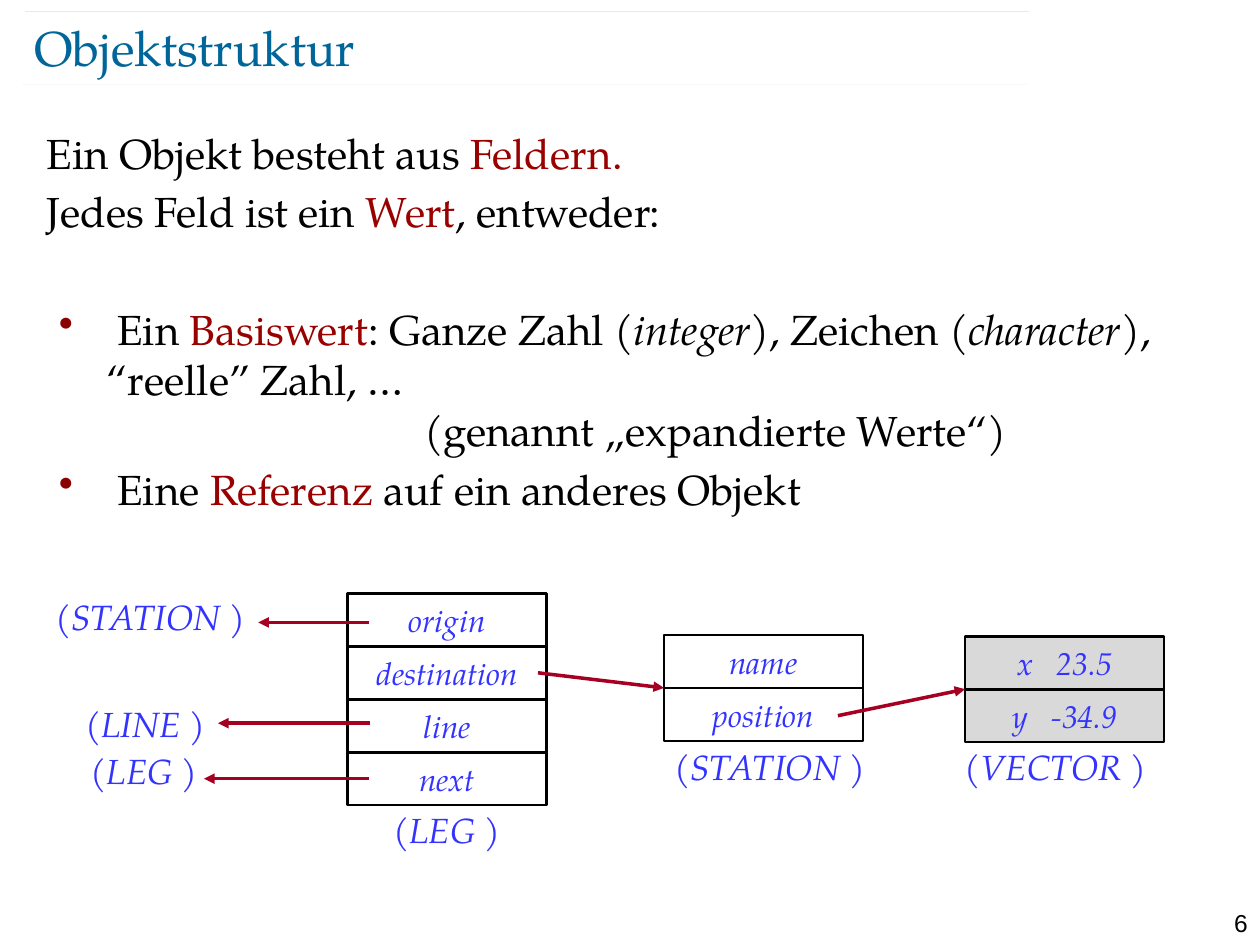
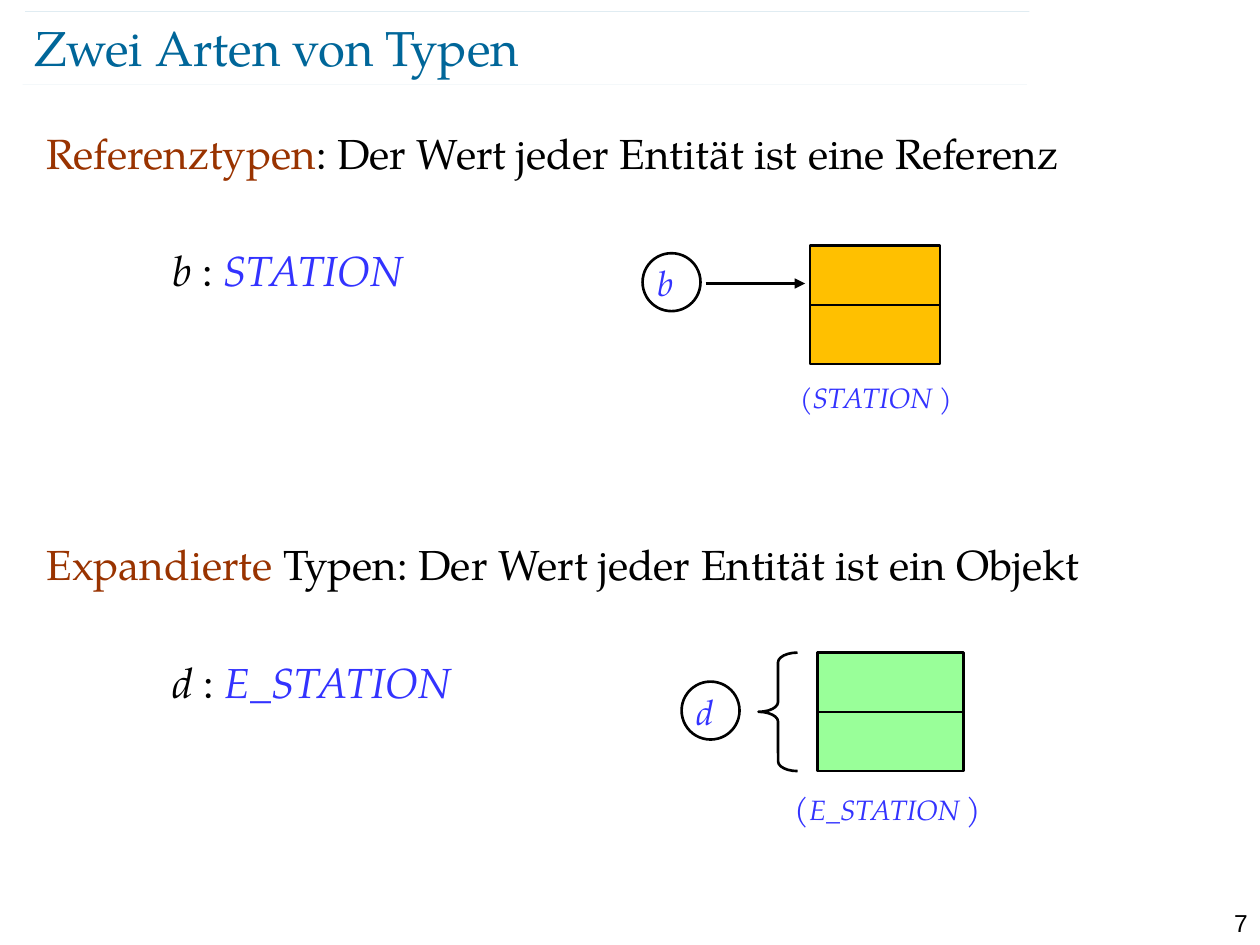
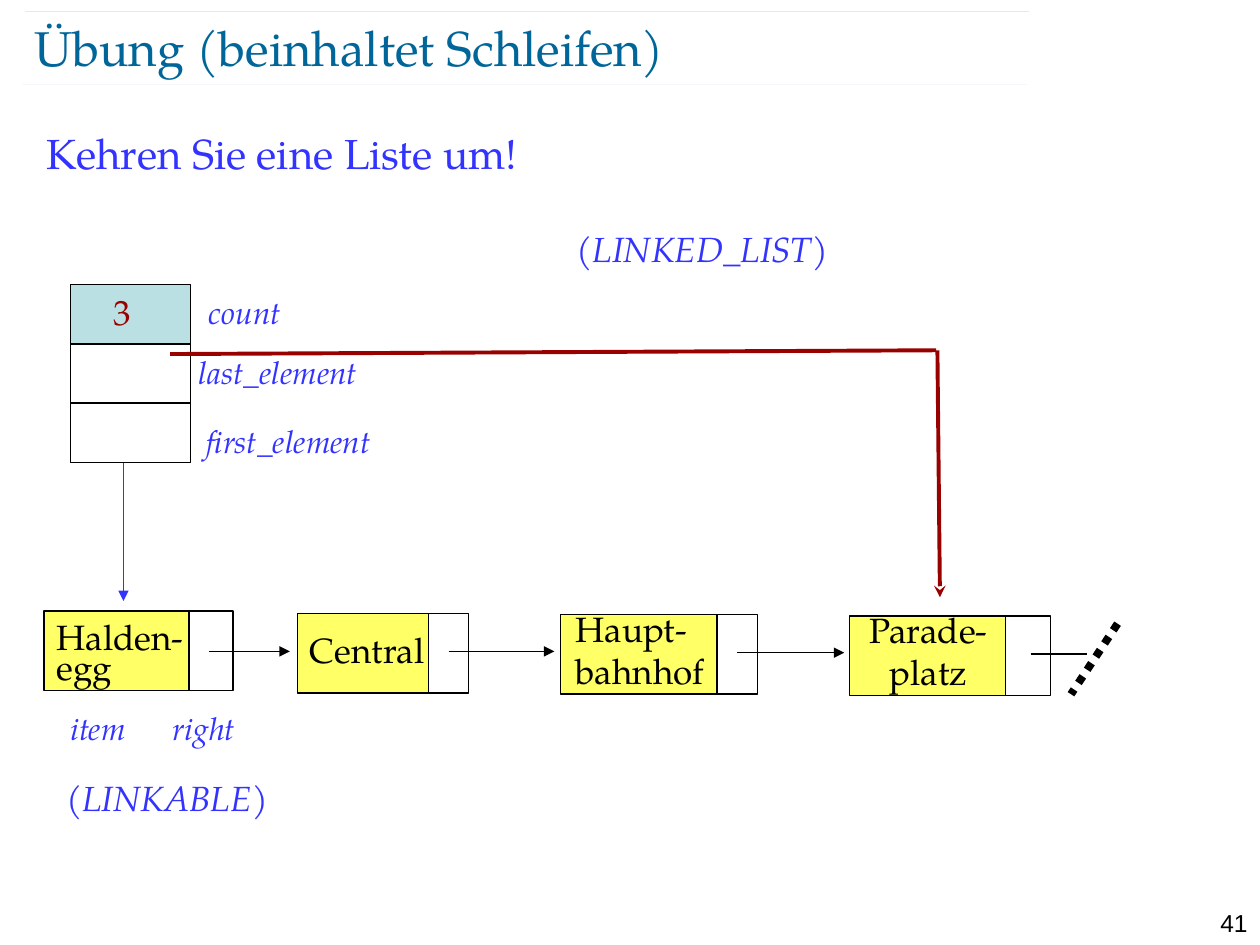
from lxml import etree
from pptx import Presentation
from pptx.dml.color import RGBColor
from pptx.enum.dml import MSO_LINE
from pptx.enum.shapes import MSO_CONNECTOR, MSO_SHAPE
from pptx.enum.text import MSO_ANCHOR, PP_ALIGN
from pptx.oxml.ns import qn
from pptx.util import Inches, Pt

STRAIGHT = MSO_CONNECTOR.STRAIGHT
DOTTED = MSO_LINE.ROUND_DOT
RECTANGLE, OVAL, BRACE = MSO_SHAPE.RECTANGLE, MSO_SHAPE.OVAL, MSO_SHAPE.LEFT_BRACE
MIDDLE = MSO_ANCHOR.MIDDLE
CENTER, RIGHT = PP_ALIGN.CENTER, PP_ALIGN.RIGHT

COLORS = {
    "black": "000000", "white": "FFFFFF", "title": "006699", "blue": "3333FF",
    "red": "990000", "bullet": "8B0000", "brown": "993300", "arrow": "A50021",
    "gray": "D9D9D9", "orange": "FFC000", "green": "99FF99",
    "yellow": "FFFF66", "teal": "BBE0E3",
}
SERIF, SANS = "TeX Gyre Pagella", "Arial"
BODY_BOX = (0.27, 0.96, 9.4, 6.17)
TITLE_BOX = (0.27, 0.13, 8.69, 0.48)
NUMBER_BOX = (9.45, 7.16, 0.55, 0.24)
HEADER_LINES = [(0.18, 0.67), (0.2, 0.09)]
HEADER_WIDTH = 7.97
NEAR, FAR, SECTION = 4.8, 38.4, 139.2

RED, BROWN, BLUE = {"color": "red"}, {"color": "brown"}, {"color": "blue"}
ITALIC = {"italic": True}
BLUE_ITALIC = {"color": "blue", "italic": True}
WIDE_SPACE = (" ", {"spacing": 9})

OBJECT_BODY = [
    ({}, ["Ein Objekt besteht aus ", ("Feldern.", RED)]),
    ({"before": NEAR}, ["Jedes Feld ist ein ", ("Wert", RED), ", entweder:"]),
    ({"before": FAR, "bullet": True},
     [" Ein ", ("Basiswert", RED), ": Ganze Zahl (", ("integer", ITALIC), "), Zeichen (",
      ("character", ITALIC), "), “reelle” Zahl, …"]),
    ({"margin": 3}, ["(genannt „expandierte Werte“)"]),
    ({"before": NEAR, "bullet": True},
     [" Eine ", ("Referenz", RED), " auf ein anderes Objekt"]),
]
RECORDS = [
    (2.76, 4.71, "white", [["origin"], ["destination"], ["line"], ["next"]]),
    (5.27, 5.04, "white", [["name"], ["position"]]),
    (7.66, 5.05, "gray", [["x", WIDE_SPACE, "23.5"], ["y", WIDE_SPACE, "-34.9"]]),
]
RECORD_WIDTH, FIELD_HEIGHT = 1.58, 0.42
RECORD_CLASSES = [
    ("LEG ", (2.75, 6.37, 1.59, 0.44)), ("LEG ", (0.35, 5.9, 1.59, 0.44)),
    ("STATION ", (4.98, 5.87, 2.26, 0.44)), ("STATION ", (0.23, 4.68, 1.93, 0.44)),
    ("LINE ", (0.45, 5.53, 1.41, 0.44)), ("VECTOR ", (7.25, 5.87, 2.26, 0.44)),
]
REFERENCES = [
    (2.93, 6.18, 1.62, 6.18), (4.27, 5.34, 5.27, 5.46), (2.93, 4.94, 2.05, 4.94),
    (2.94, 5.74, 1.73, 5.74), (6.65, 5.68, 7.66, 5.47),
]

TYPES_BODY = [
    ({}, [("Referenztypen", BROWN), ": Der Wert jeder Entität ist eine Referenz"]),
    ({"before": FAR, "margin": 1}, [("b ", ITALIC), ": ", ("STATION", BLUE_ITALIC)]),
    ({"before": SECTION},
     [("Expandierte ", BROWN), "Typen: Der Wert jeder Entität ist ein Objekt"]),
    ({"before": FAR, "margin": 1}, [("d ", ITALIC), ": ", ("E_STATION", BLUE_ITALIC)]),
]
ENTITIES = [
    ("b", (5.1, 2.01), (6.43, 1.95, 1.03, 0.94), "orange",
     "STATION ", 16, (6.25, 2.97, 1.61, 0.37)),
    ("d", (5.41, 5.41), (6.49, 5.18, 1.16, 0.94), "green",
     "E_STATION ", 18, (6.21, 6.21, 1.96, 0.4)),
]
CIRCLE = 0.46

EXERCISE_BODY = [({}, [("Kehren Sie eine Liste um!", BLUE)])]
LIST_LEFT, LIST_TOP, LIST_WIDTH, LIST_ROW = 0.56, 2.26, 0.95, 0.47
LIST_FILLS = ["teal", "white", "white"]
NODE_HEIGHT = 0.63
NODES = [
    (0.35, 4.85, 1.15, 0.35, "Halden-egg", (0.35, 4.93, 1.23, 0.58), {"line_spacing": 0.7}),
    (2.36, 4.87, 1.04, 0.32, "Central", (2.36, 4.94, 1.18, 0.43), {}),
    (4.45, 4.88, 1.24, 0.32, "Haupt-\nbahnhof", (4.47, 4.77, 1.33, 0.77), {}),
    (6.74, 4.89, 1.24, 0.36, "Parade-\nplatz", (6.76, 4.78, 1.22, 0.77), {"alignment": CENTER}),
]
NODE_ARROWS = [(1.66, 5.17, 2.3, 5.17), (3.56, 5.17, 4.4, 5.17), (5.85, 5.18, 6.7, 5.18)]
FIELD_NAMES = [
    ("count", (1.56, 2.28, 1.02, 0.4)), ("last_element", (1.48, 2.75, 2.76, 0.4)),
    ("first_element", (1.54, 3.3, 2.76, 0.4)), ("item", (0.46, 5.58, 0.79, 0.4)),
    ("right", (1.27, 5.58, 0.79, 0.4)),
]
LIST_CLASSES = [
    ("LINKED_LIST", (4.48, 1.76, 2.81, 0.43)), ("LINKABLE", (0.43, 6.11, 2.06, 0.43)),
]


def rgb(name):
    return RGBColor.from_string(COLORS[name])


def inches(lengths):
    return [Inches(length) for length in lengths]


def add_span(para, text, size, color="black", italic=False, font=SERIF, spacing=0):
    for position, line in enumerate(text.split("\n")):
        if position:
            para.add_line_break()
        span = para.add_run()
        span.text = line
        for name, value in {"name": font, "size": Pt(size), "italic": italic}.items():
            setattr(span.font, name, value)
        span.font.color.rgb = rgb(color)
        if spacing:
            span.font._element.set("spc", str(spacing * 100))


def add_spans(para, spans, size, **base):
    for item in spans:
        text, style = (item, {}) if isinstance(item, str) else item
        add_span(para, text, size, **{**base, **style})


def add_box(page, place, spans=(), size=24, layout=None, inset=None, anchor=None, **base):
    box = page.shapes.add_textbox(*inches(place))
    frame = box.text_frame
    frame.word_wrap = True
    if inset is not None:
        for side in ("left", "top", "right", "bottom"):
            setattr(frame, f"margin_{side}", Inches(inset))
    if anchor is not None:
        frame.vertical_anchor = anchor
    para = frame.paragraphs[0]
    for name, value in (layout or {}).items():
        setattr(para, name, value)
    add_spans(para, spans, size, **base)
    return box


def add_class(page, name, place, size=20, paren=None, layout=None):
    paren = {"size": paren or size}
    box = add_box(page, place, layout=layout)
    para = box.text_frame.paragraphs[0]
    add_span(para, "(", color="blue", **paren)
    add_span(para, name, size, **BLUE_ITALIC)
    add_span(para, ")", color="blue", **paren)


def add_body(page, paragraphs):
    frame = add_box(page, BODY_BOX).text_frame
    for position, (layout, spans) in enumerate(paragraphs):
        para = frame.add_paragraph() if position else frame.paragraphs[0]
        para.space_before = Pt(layout.get("before", 0))
        properties = para._p.get_or_add_pPr()
        margin = layout.get("margin", 0)
        if layout.get("bullet"):
            margin = 0.48
            properties.set("indent", str(Inches(-0.38)))
            color = etree.SubElement(properties, qn("a:buClr"))
            etree.SubElement(color, qn("a:srgbClr"), val=COLORS["bullet"])
            etree.SubElement(properties, qn("a:buChar"), char="•")
        properties.set("marL", str(Inches(margin)))
        add_spans(para, spans, 24)


def add_figure(page, kind, place, fill=None, width=1.5):
    figure = page.shapes.add_shape(kind, *inches(place))
    figure.shadow.inherit = False
    if fill:
        figure.fill.solid()
        figure.fill.fore_color.rgb = rgb(fill)
    else:
        figure.fill.background()
    figure.line.color.rgb = rgb("black")
    figure.line.width = Pt(width)
    return figure


def add_line(page, ends, color="black", width=1.5, head=None, dash=None, alpha=None):
    connector = page.shapes.add_connector(STRAIGHT, *inches(ends))
    connector.line.color.rgb = rgb(color)
    connector.line.width = Pt(width)
    if dash is not None:
        connector.line.dash_style = dash
    properties = connector.element.spPr
    outline = properties.find(qn("a:ln"))
    if alpha:
        for shade in outline.iter(qn("a:srgbClr")):
            etree.SubElement(shade, qn("a:alpha"), val=str(alpha * 1000))
    if head:
        etree.SubElement(outline, qn("a:tailEnd"), type=head)
    etree.SubElement(properties, qn("a:effectLst"))
    return connector


def add_page(deck, number, title, body):
    page = deck.slides.add_slide(deck.slide_layouts[6])
    add_box(page, NUMBER_BOX, [number], 14, {"alignment": RIGHT}, font=SANS)
    for left, top in HEADER_LINES:
        add_line(page, (left, top, left + HEADER_WIDTH, top), "title", 0.1, alpha=35)
    add_box(page, TITLE_BOX, [title], 28, inset=0, anchor=MIDDLE, color="title")
    add_body(page, body)
    return page


def draw_objects(page):
    for left, top, fill, fields in RECORDS:
        for row, spans in enumerate(fields):
            place = (left, top + row * FIELD_HEIGHT, RECORD_WIDTH, FIELD_HEIGHT)
            frame = add_figure(page, RECTANGLE, place, fill).text_frame
            frame.word_wrap = False
            frame.vertical_anchor = MIDDLE
            para = frame.paragraphs[0]
            para.alignment = CENTER
            add_spans(para, spans, 18, **BLUE_ITALIC)
    for name, place in RECORD_CLASSES:
        add_class(page, name, place, layout={"alignment": CENTER})
    for ends in REFERENCES:
        add_line(page, ends, "arrow", 2, "triangle")


def draw_types(page):
    for name, (left, top), place, fill, class_name, paren, class_place in ENTITIES:
        record = add_figure(page, RECTANGLE, place, fill)
        middle = place[1] + place[3] / 2
        divider = add_line(page, (place[0], middle, place[0] + place[2], middle))
        divider.begin_connect(record, 1)
        divider.end_connect(record, 3)
        add_figure(page, OVAL, (left, top, CIRCLE, CIRCLE), "white")
        add_box(page, (left + 0.02, top + 0.02, 0.31, 0.44), [name], 20, **BLUE_ITALIC)
        add_class(page, class_name, class_place, 16, paren)
    add_line(page, (5.6, 2.25, 6.39, 2.25), head="triangle")
    brace = add_figure(page, BRACE, (6.02, 5.18, 0.31, 0.94))
    brace.adjustments[0] = 0.25


def draw_list(page):
    add_line(page, (0.98, 3.43, 0.98, 4.77), "blue", 0.75, "triangle")
    for row, fill in enumerate(LIST_FILLS):
        place = (LIST_LEFT, LIST_TOP + row * LIST_ROW, LIST_WIDTH, LIST_ROW)
        add_figure(page, RECTANGLE, place, fill, 0.75)
    add_box(page, (0.8, 2.26, 1.02, 0.43), ["3"], 20, color="red")
    for left, top, item_width, link_width, text, place, layout in NODES:
        add_figure(page, RECTANGLE, (left, top, item_width, NODE_HEIGHT), "yellow", 0.75)
        add_figure(page, RECTANGLE, (left + item_width, top, link_width, NODE_HEIGHT),
                   "white", 0.75)
        add_box(page, place, [text], 20, layout)
    for ends in NODE_ARROWS:
        add_line(page, ends, width=0.75, head="triangle")
    add_line(page, (8.18, 5.19, 8.63, 5.19))
    add_line(page, (8.87, 4.95, 8.5, 5.51), width=4.5, dash=DOTTED)
    for name, place in FIELD_NAMES:
        add_box(page, place, [name], 18, **BLUE_ITALIC)
    for name, place in LIST_CLASSES:
        add_class(page, name, place)
    add_line(page, (1.35, 2.81, 7.43, 2.78), "red", 2.25)
    add_line(page, (7.44, 2.78, 7.46, 4.74), "red", 2.25, "stealth")


def main():
    deck = Presentation()
    deck.slide_width, deck.slide_height = inches((10, 7.5))
    draw_objects(add_page(deck, "6", "Objektstruktur", OBJECT_BODY))
    draw_types(add_page(deck, "7", "Zwei Arten von Typen", TYPES_BODY))
    draw_list(add_page(deck, "41", "Übung (beinhaltet Schleifen)", EXERCISE_BODY))
    deck.save("out.pptx")


if __name__ == "__main__":
    main()
